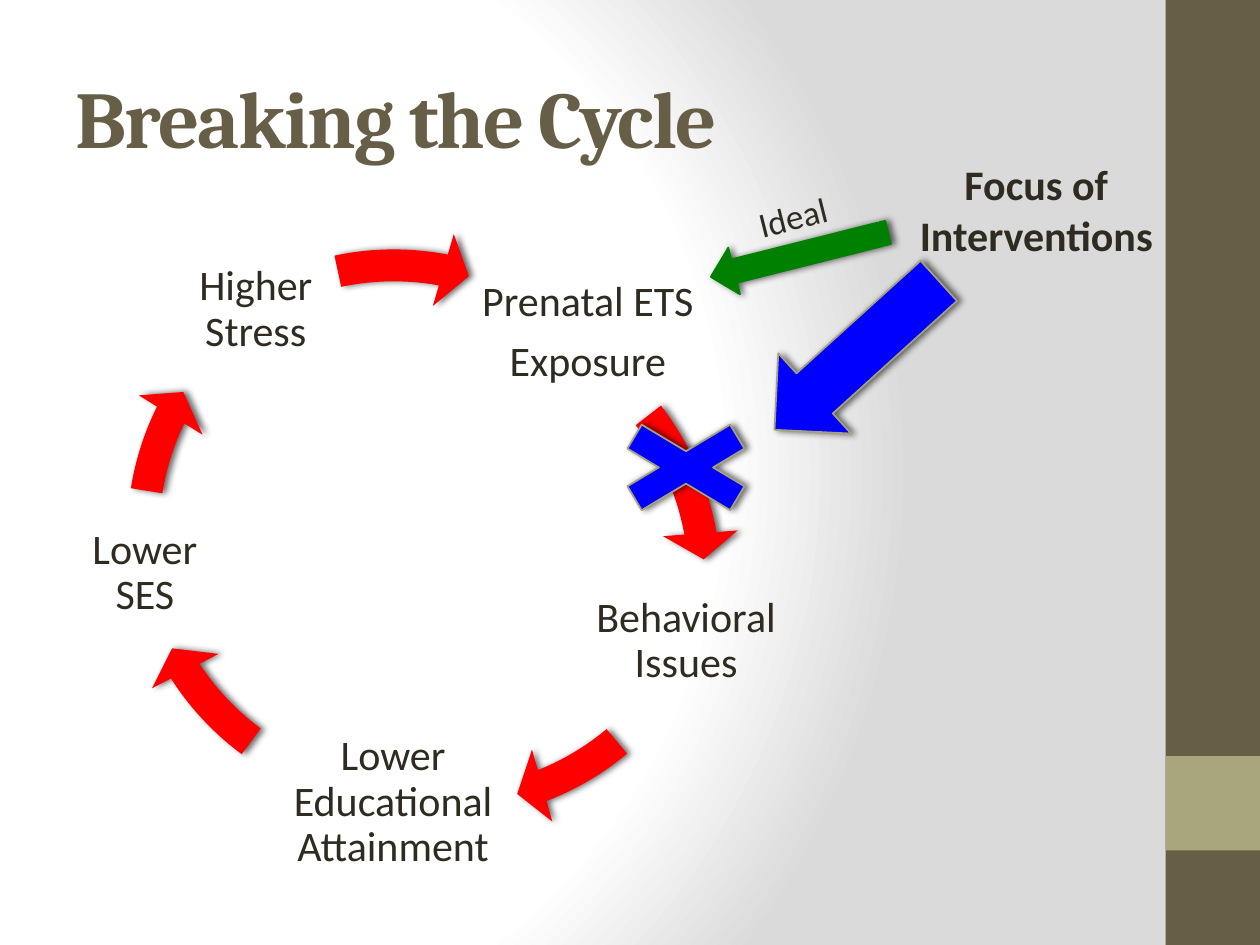
from dataclasses import dataclass

import pptx
import pptx.dml.color
import pptx.enum.shapes
import pptx.enum.text
import pptx.oxml
import pptx.util
from pptx.oxml.ns import nsdecls

Pt = pptx.util.Pt
Shape = pptx.enum.shapes.MSO_SHAPE
Align = pptx.enum.text.PP_ALIGN
Anchor = pptx.enum.text.MSO_ANCHOR


@dataclass(frozen=True)
class Theme:
    heading_font: str = "Cambria"
    body_font: str = "Calibri"
    brown: str = "675E47"
    olive: str = "A9A57C"
    outline: str = "A6A278"
    text: str = "2F2B20"
    red: str = "FF0000"
    blue: str = "0000FF"
    green: str = "008000"
    title_size: int = 46
    body_size: int = 24
    note_size: int = 20


THEME = Theme()
ARROW_DIAMETER = 350.6

# Label lines, label frame, then the outgoing arrow: left, top, end, start.
# Arrow angles are in units of 100000/60000 degree.
STAGES = [
    (["Prenatal ETS", "Exposure"], (268.6, 143.3, 134.6, 93.6),
     (73.4, 156.2, 210.007, 193.392)),
    (["Behavioral Issues"], (327.6, 319.7, 128.9, 93.6),
     (78.5, 130.3, 41.182, 30.064)),
    (["Lower Educational Attainment"], (144, 411.8, 161.3, 93.6),
     (59.8, 124.6, 88.253, 75.896)),
    (["Lower SES"], (36, 280.8, 93.6, 93.6),
     (60.5, 129.6, 123.658, 113.479)),
    (["Higher Stress"], (99.4, 130.3, 93.6, 93.6),
     (49.7, 130.3, 168.378, 154.822)),
]


def rgb(color):
    return pptx.dml.color.RGBColor.from_string(color)


def paint_background(page):
    """Radial fade from white to grey at the right."""
    page.background.fill.solid()
    properties = page.background._cSld.bg.bgPr
    stops = "".join(
        f'<a:gs pos="{position}"><a:srgbClr val="{color}"/></a:gs>'
        for position, color in [(0, "FFFFFF"), (75000, "FFFFFF"), (100000, "DADADA")])
    gradient = pptx.oxml.parse_xml(
        f'<a:gradFill {nsdecls("a")} rotWithShape="1"><a:gsLst>{stops}</a:gsLst>'
        '<a:path path="circle">'
        '<a:fillToRect l="20000" t="50000" r="100000" b="50000"/>'
        '</a:path></a:gradFill>')
    properties.replace(properties[0], gradient)


def add_shadow(shape):
    shape._element.spPr.append(pptx.oxml.parse_xml(
        f'<a:effectLst {nsdecls("a")}>'
        '<a:outerShdw blurRad="50800" dist="25400" dir="0" rotWithShape="0">'
        '<a:srgbClr val="000000"><a:alpha val="60000"/></a:srgbClr>'
        '</a:outerShdw></a:effectLst>'))


def add_filled(page, kind, frame, color, outline=None, rotation=0, shadow=True):
    shape = page.shapes.add_shape(kind, *map(Pt, frame))
    shape.rotation = rotation
    shape.fill.solid()
    shape.fill.fore_color.rgb = rgb(color)
    if outline:
        shape.line.color.rgb = rgb(outline)
        shape.line.width = Pt(1)
    else:
        shape.line.fill.background()
    if shadow:
        add_shadow(shape)
    else:
        shape.shadow.inherit = False
    return shape


def format_run(span, font, size, color, bold=False):
    span.font.name = font
    span.font.size = Pt(size)
    span.font.color.rgb = rgb(color)
    span.font.bold = bold


def add_text(page, lines, frame, size=THEME.body_size, bold=False, align=Align.CENTER):
    box = page.shapes.add_textbox(*map(Pt, frame))
    box.text_frame.word_wrap = True
    box.text_frame.text = "\n".join(lines)
    for para in box.text_frame.paragraphs:
        para.alignment = align
        for span in para.runs:
            format_run(span, THEME.body_font, size, THEME.text, bold)
    return box


def add_stage_label(page, lines, frame):
    text = add_text(page, lines, frame).text_frame
    text.vertical_anchor = Anchor.MIDDLE
    text.margin_left = text.margin_top = text.margin_right = text.margin_bottom = Pt(2.4)
    for para in text.paragraphs:
        para.line_spacing = 0.9
        para.space_after = Pt(0.35 * THEME.body_size)


def add_cycle_arrow(page, left, top, end, start):
    arrow = add_filled(page, Shape.CIRCULAR_ARROW,
                       (left, top, ARROW_DIAMETER, ARROW_DIAMETER), THEME.red)
    for index, value in enumerate((0.052, 3.355, end, start, 0.061)):
        arrow.adjustments[index] = value


def set_title(page, wording):
    title = page.shapes.title
    title.left, title.top, title.width, title.height = map(Pt, (36, 21.6, 599.8, 90))
    title.text_frame.text = wording
    title.text_frame.vertical_anchor = Anchor.MIDDLE
    para = title.text_frame.paragraphs[0]
    para.alignment = Align.LEFT
    span = para.runs[0]
    format_run(span, THEME.heading_font, THEME.title_size, THEME.brown, bold=True)
    span.font._element.set("spc", "-100")


def main():
    deck = pptx.Presentation()
    deck.slide_width, deck.slide_height = Pt(720), Pt(540)
    page = deck.slides.add_slide(deck.slide_layouts[5])

    paint_background(page)
    add_filled(page, Shape.RECTANGLE, (666, 0, 54, 540), THEME.brown, shadow=False)
    add_filled(page, Shape.RECTANGLE, (666, 432, 54, 54), THEME.olive, shadow=False)
    set_title(page, "Breaking the Cycle")

    for lines, frame, arrow in STAGES:
        add_stage_label(page, lines, frame)
        add_cycle_arrow(page, *arrow)

    add_filled(page, Shape.LEFT_ARROW, (426.2, 172.1, 126.7, 61.9),
               THEME.blue, THEME.outline, rotation=317.8)
    add_filled(page, Shape.MATH_MULTIPLY, (335.5, 233.3, 113, 67.7),
               THEME.blue, THEME.outline)
    add_filled(page, Shape.STRIPED_RIGHT_ARROW, (404.6, 131.8, 104.4, 27.4),
               THEME.green, THEME.green, rotation=165.9)
    ideal = add_text(page, ["Ideal"], (425.5, 103.7, 88.6, 31.7),
                     THEME.note_size, align=Align.LEFT)
    ideal.rotation = 345.9
    add_text(page, ["Focus of", "Interventions"], (510.5, 87.1, 163.4, 65.5), bold=True)

    deck.save("out.pptx")


if __name__ == "__main__":
    main()
